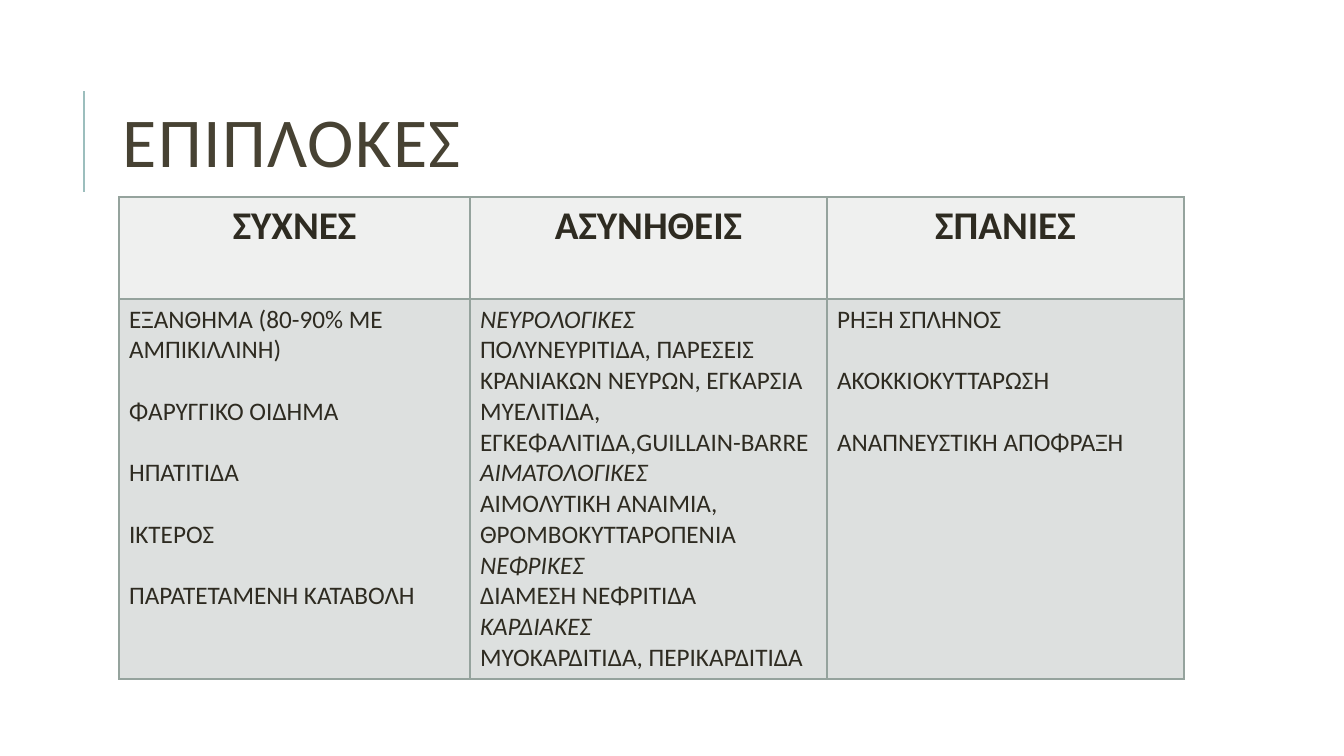
from dataclasses import dataclass

from lxml import etree
from pptx import Presentation
from pptx.dml.color import RGBColor
from pptx.enum.shapes import MSO_CONNECTOR
from pptx.enum.text import MSO_ANCHOR, PP_ALIGN
from pptx.oxml.ns import qn
from pptx.util import Emu, Pt

STRAIGHT = MSO_CONNECTOR.STRAIGHT
LEFT, CENTER = PP_ALIGN.LEFT, PP_ALIGN.CENTER
MIDDLE = MSO_ANCHOR.MIDDLE

PX_PER_INCH = 100.8
FONT = "Calibri"
ACCENT, TITLE_COLOR, TEXT_COLOR = "9CBEBD", "474233", "2E2B21"
HEADER_FILL, BODY_FILL, BORDER = "EFF0EF", "DDE0DF", "95A39D"
HEADER_HEIGHT, BODY_HEIGHT = 102, 380
ITEM_GAP = 22


@dataclass(frozen=True)
class Entry:
    text: str
    italic: bool = False
    gap: int = 0


@dataclass(frozen=True)
class Category:
    heading: str
    width: int
    entries: list[Entry]


def spaced(first: str, *others: str) -> list[Entry]:
    """Entries with one empty line's height between them."""
    return [Entry(first)] + [Entry(text, gap=ITEM_GAP) for text in others]


def grouped(groups: dict[str, str]) -> list[Entry]:
    """An italic group name followed by its complications."""
    return [entry for name, members in groups.items()
            for entry in (Entry(name, italic=True), Entry(members))]


CATEGORIES = [
    Category("ΣΥΧΝΕΣ", 351, spaced(
        "ΕΞΑΝΘΗΜΑ (80-90% ΜΕ ΑΜΠΙΚΙΛΛΙΝΗ)", "ΦΑΡΥΓΓΙΚΟ ΟΙΔΗΜΑ", "ΗΠΑΤΙΤΙΔΑ",
        "ΙΚΤΕΡΟΣ", "ΠΑΡΑΤΕΤΑΜΕΝΗ ΚΑΤΑΒΟΛΗ")),
    Category("ΑΣΥΝΗΘΕΙΣ", 357, grouped({
        "ΝΕΥΡΟΛΟΓΙΚΕΣ": "ΠΟΛΥΝΕΥΡΙΤΙΔΑ, ΠΑΡΕΣΕΙΣ ΚΡΑΝΙΑΚΩΝ ΝΕΥΡΩΝ, ΕΓΚΑΡΣΙΑ "
                        "ΜΥΕΛΙΤΙΔΑ, ΕΓΚΕΦΑΛΙΤΙΔΑ,GUILLAIN-BARRE",
        "ΑΙΜΑΤΟΛΟΓΙΚΕΣ": "ΑΙΜΟΛΥΤΙΚΗ ΑΝΑΙΜΙΑ, ΘΡΟΜΒΟΚΥΤΤΑΡΟΠΕΝΙΑ",
        "ΝΕΦΡΙΚΕΣ": "ΔΙΑΜΕΣΗ ΝΕΦΡΙΤΙΔΑ",
        "ΚΑΡΔΙΑΚΕΣ": "ΜΥΟΚΑΡΔΙΤΙΔΑ, ΠΕΡΙΚΑΡΔΙΤΙΔΑ"})),
    Category("ΣΠΑΝΙΕΣ", 357, spaced(
        "ΡΗΞΗ ΣΠΛΗΝΟΣ", "ΑΚΟΚΚΙΟΚΥΤΤΑΡΩΣΗ", "ΑΝΑΠΝΕΥΣΤΙΚΗ ΑΠΟΦΡΑΞΗ")),
]


def px(length: int) -> Emu:
    return Emu(round(length * 914400 / PX_PER_INCH))


def rgb(color: str) -> RGBColor:
    return RGBColor.from_string(color)


def write(paragraph, text: str, *, size: int, color: str = TEXT_COLOR,
          bold: bool = False, italic: bool = False, align=LEFT, gap: int = 0,
          line_spacing: float = 1.0, tracking: int = 0) -> None:
    """Fill a paragraph; gap and tracking are in points."""
    paragraph.alignment = align
    paragraph.space_before = Pt(gap)
    paragraph.line_spacing = line_spacing
    run = paragraph.add_run()
    run.text = text
    font = run.font
    font.name, font.size, font.bold, font.italic = FONT, Pt(size), bold, italic
    font.color.rgb = rgb(color)
    if tracking:
        run._r.get_or_add_rPr().set("spc", str(tracking * 100))


def style_cell(cell, fill: str) -> None:
    cell.fill.solid()
    cell.fill.fore_color.rgb = rgb(fill)
    properties = cell._tc.get_or_add_tcPr()
    for position, side in enumerate(("lnL", "lnR", "lnT", "lnB")):
        edge = etree.Element(qn(f"a:{side}"), w=str(Pt(1)))
        solid = etree.SubElement(edge, qn("a:solidFill"))
        etree.SubElement(solid, qn("a:srgbClr"), val=BORDER)
        properties.insert(position, edge)


def add_title(slide, text: str) -> None:
    rule = slide.shapes.add_connector(STRAIGHT, px(84), px(192), px(84), px(91))
    rule.line.color.rgb = rgb(ACCENT)
    rule.line.width = Pt(1.5)
    etree.SubElement(rule._element.spPr, qn("a:effectLst"))

    title = slide.shapes.add_textbox(px(113), px(65), px(1071), px(165))
    frame = title.text_frame
    frame.word_wrap = True
    frame.vertical_anchor = MIDDLE
    write(frame.paragraphs[0], text, size=50, color=TITLE_COLOR,
          line_spacing=0.8, tracking=1)


def add_complications(slide, categories: list[Category]) -> None:
    width = sum(category.width for category in categories)
    table = slide.shapes.add_table(
        2, len(categories), px(119), px(197), px(width),
        px(HEADER_HEIGHT + BODY_HEIGHT)).table
    table.first_row = table.horz_banding = False
    table.rows[0].height = px(HEADER_HEIGHT)
    table.rows[1].height = px(BODY_HEIGHT)
    for column, category in enumerate(categories):
        table.columns[column].width = px(category.width)
        header, body = table.cell(0, column), table.cell(1, column)
        style_cell(header, HEADER_FILL)
        style_cell(body, BODY_FILL)
        write(header.text_frame.paragraphs[0], category.heading,
              size=28, bold=True, align=CENTER)
        frame = body.text_frame
        for index, entry in enumerate(category.entries):
            paragraph = frame.add_paragraph() if index else frame.paragraphs[0]
            write(paragraph, entry.text, size=18, italic=entry.italic, gap=entry.gap)


def main() -> None:
    deck = Presentation()
    deck.slide_width, deck.slide_height = px(1344), px(756)
    slide = deck.slides.add_slide(deck.slide_layouts[6])
    add_title(slide, "ΕΠΙΠΛΟΚΕΣ")
    add_complications(slide, CATEGORIES)
    deck.save("out.pptx")


if __name__ == "__main__":
    main()
